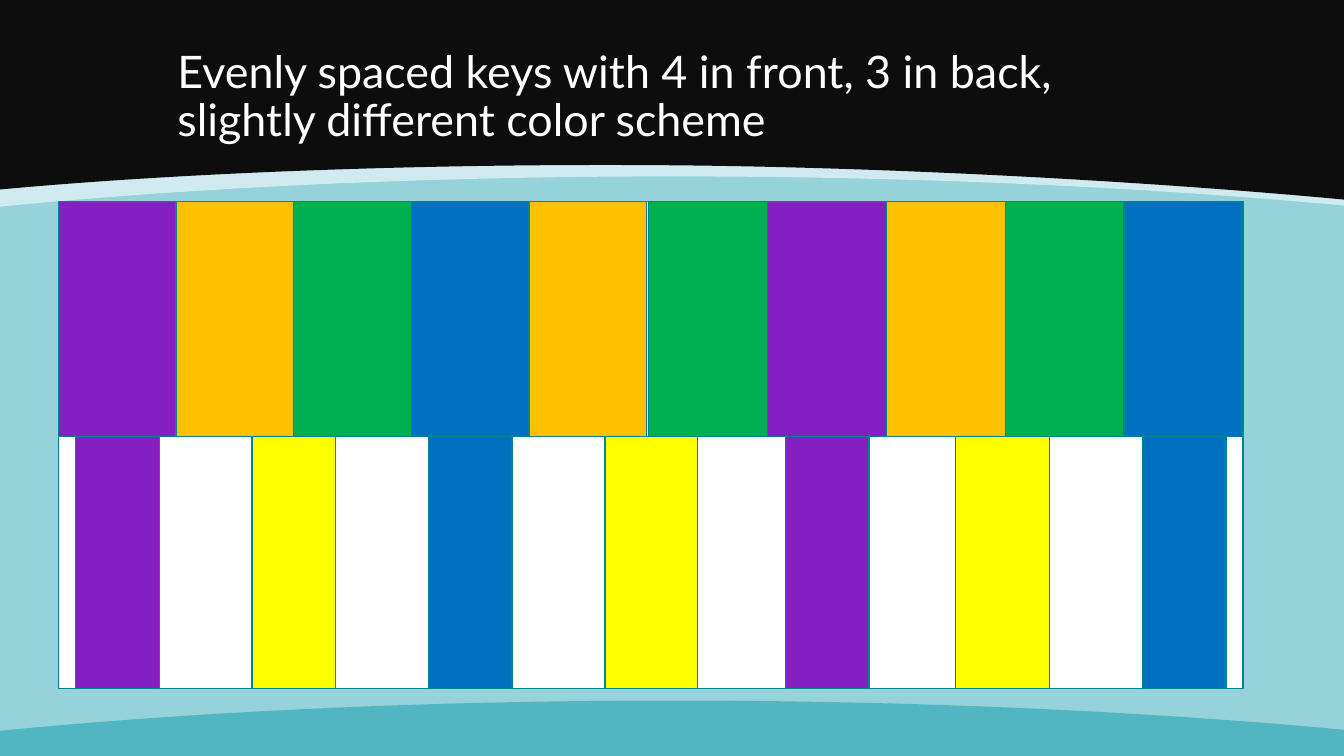
from lxml import etree
from pptx import Presentation
from pptx.dml.color import RGBColor
from pptx.enum.shapes import MSO_SHAPE as Shape
from pptx.enum.text import MSO_ANCHOR as Anchor, MSO_AUTO_SIZE as Auto, PP_ALIGN as Align
from pptx.oxml.ns import qn
from pptx.util import Inches, Pt


def paint(fill, color):
    fill.solid()
    fill.fore_color.rgb = RGBColor.from_string(color)


def block(x, y, w, h, color):
    key = slide.shapes.add_shape(Shape.RECTANGLE, Inches(x), Inches(y), Inches(w), Inches(h))
    key.shadow.inherit = False
    paint(key.fill, color)
    paint(key.line.fill, "008392")
    key.line.width = Pt(1)


PURPLE, ORANGE, GREEN = "8420C1", "FFC000", "00B050"
BLUE, YELLOW, WHITE = "0070C0", "FFFF00", "FFFFFF"

deck = Presentation()
deck.slide_width = Inches(13.33)
deck.slide_height = Inches(7.5)
slide = deck.slides.add_slide(deck.slide_layouts[5])
paint(slide.background.fill, "96D2DA")

waves = [
    ("EAF6F8", [(0, 0), (13.33, 0), (13.33, 2.04)],
     [(11.4, 1.86), (9.12, 1.75), (6.68, 1.75), (4.23, 1.75), (1.94, 1.86), (0, 2.05)]),
    ("0D0D0D", [(0, 0), (13.33, 0), (13.33, 1.98)],
     [(11.4, 1.8), (8.89, 1.66), (6.68, 1.64), (4.45, 1.62), (1.94, 1.7), (0, 1.88)]),
    ("52B5C2", [(13.33, 7.5), (0, 7.5), (0, 7.25)],
     [(1.94, 7.06), (4.23, 6.95), (6.68, 6.95), (9.12, 6.95), (11.4, 7.06), (13.33, 7.24)]),
]
bands = []
for color, corners, curve in waves:
    points = [(Inches(x), Inches(y)) for x, y in corners + curve]
    pen = slide.shapes.build_freeform(*points[0])
    pen.add_line_segments(points[1:], close=True)
    band = pen.convert_to_shape()
    band.shadow.inherit = False
    paint(band.fill, color)
    band.line.fill.background()
    bands.append(band)
    lines = list(band.element.iter(qn("a:lnTo")))[-len(curve):]
    for n in range(0, len(lines), 3):
        bend = etree.Element(qn("a:cubicBezTo"))
        lines[n].addprevious(bend)
        for line in lines[n:n + 3]:
            bend.append(line[0])
            line.getparent().remove(line)

tint = bands[0].element.spPr.find(qn("a:solidFill"))[0]
etree.SubElement(tint, qn("a:alpha"), val="70000")

title = slide.shapes.title
title.element.getparent().append(title.element)
title.left, title.top = Inches(1.66), Inches(0.3)
title.width, title.height = Inches(10), Inches(1.2)
frame = title.text_frame
frame.word_wrap = True
frame.auto_size = Auto.NONE
frame.vertical_anchor = Anchor.BOTTOM
text = frame.paragraphs[0]
text.add_run().text = "Evenly spaced keys with 4 in front, 3 in back,"
text.add_line_break()
text.add_run().text = "slightly different color scheme"
text.alignment = Align.LEFT
text.line_spacing = 0.9
text.font.name = "Lato"
text.font.size = Pt(32)
text.font.color.rgb = RGBColor.from_string(WHITE)

block(0.58, 2, 11.75, 4.83, WHITE)

rows = [
    (0.58, 7 / 6, [PURPLE, ORANGE, GREEN, BLUE, ORANGE]),
    (6.43, 1.18, [GREEN, PURPLE, ORANGE, GREEN, BLUE]),
]
for left, wide, colors in rows:
    for n, color in enumerate(colors):
        block(left + n * wide, 2, wide, 2.33, color)

keys = [
    (0.75, 0.83, PURPLE), (2.5, 0.83, YELLOW), (4.25, 0.83, BLUE), (6, 0.92, YELLOW),
    (7.79, 0.83, PURPLE), (9.48, 0.93, YELLOW), (11.33, 0.83, BLUE),
]
for left, wide, color in keys:
    block(left, 4.33, wide, 2.5, color)

deck.save("out.pptx")
